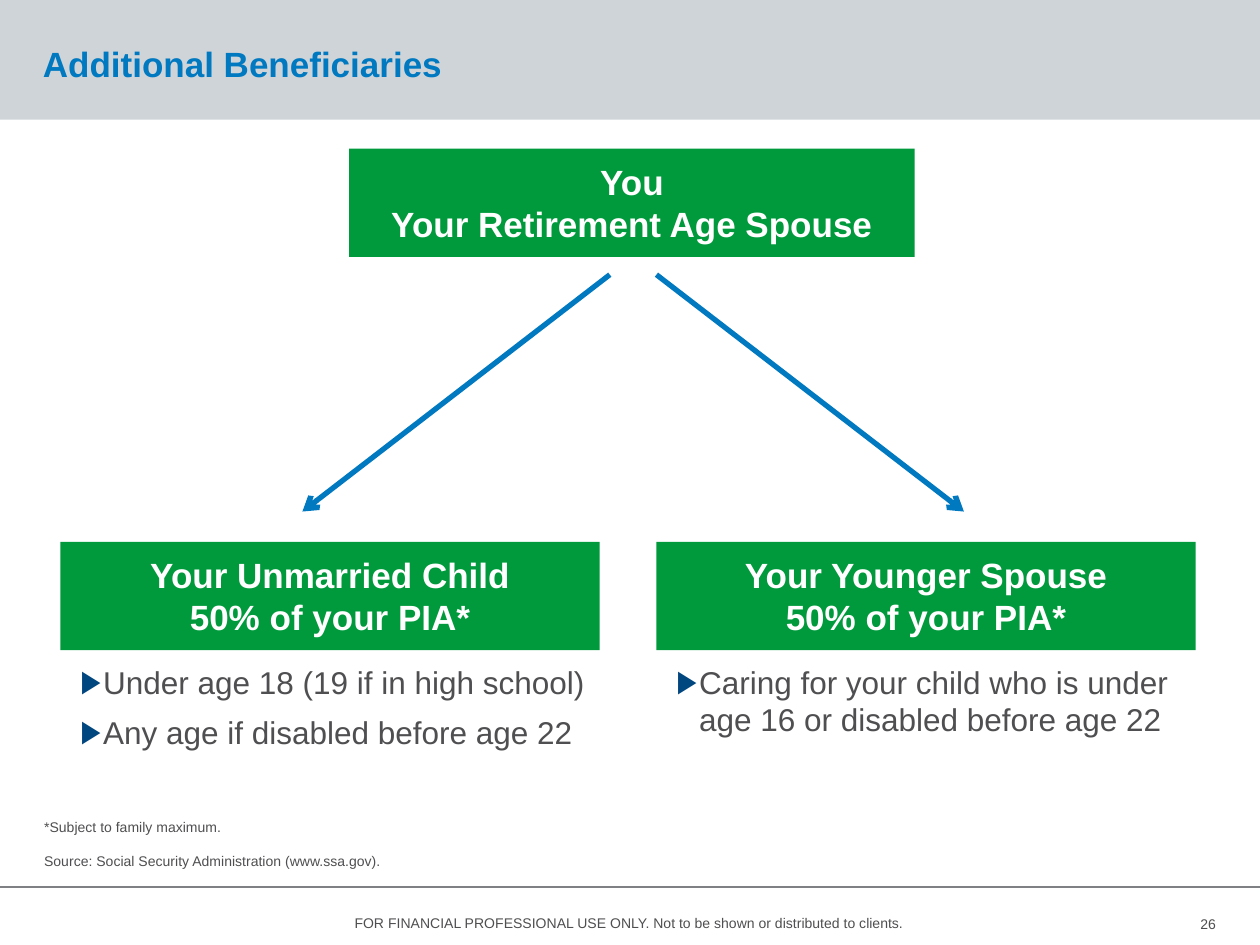
from typing import NamedTuple

from lxml.etree import SubElement as Sub
from pptx import Presentation
from pptx.dml.color import RGBColor
from pptx.enum.shapes import MSO_CONNECTOR as Link, MSO_SHAPE as Kind
from pptx.enum.text import MSO_ANCHOR as Anchor, PP_ALIGN as Align
from pptx.oxml.ns import qn
from pptx.util import Inches, Pt

COLS, ROWS = 100, 75
BLUE, NAVY, GREEN = "0079C1", "00467F", "009A3D"
GREY, BAND, RULE, WHITE = "4F4E50", "CFD4D8", "7E8083", "FFFFFF"

deck = Presentation()
deck.slide_width, deck.slide_height = Inches(10), Inches(7.5)
slide = deck.slides.add_slide(deck.slide_layouts[6])
shapes = slide.shapes


class Area(NamedTuple):
    """Left, top, width and height in grid columns and rows."""
    col: float
    row: float
    wide: float
    high: float


class Style(NamedTuple):
    size: float
    color: str = GREY
    bold: bool = False
    align: Align = Align.LEFT
    anchor: Anchor = Anchor.TOP
    inset: tuple[float, float] = (0, 0)
    wrap: bool = True
    gap: float = 0
    bullet: bool = False


class Branch(NamedTuple):
    col: float
    title: list[str]
    notes: list[str]
    start: float
    end: float


HEAD = Style(20, BLUE, True, anchor=Anchor.MIDDLE)
LABEL = Style(20, WHITE, True, Align.CENTER, Anchor.MIDDLE, (0.1, 0), wrap=False)
NOTE = Style(18, inset=(0.1, 0.05), gap=7, bullet=True)
FINE = Style(8, anchor=Anchor.BOTTOM, gap=10)
FOOT = Style(8, align=Align.CENTER, inset=(0.1, 0.05))
PAGE = Style(8, align=Align.RIGHT, anchor=Anchor.MIDDLE)

BRANCHES = [
    Branch(4.8, ["Your Unmarried Child", "50% of your PIA*"],
           ["Under age 18 (19 if in high school)",
            "Any age if disabled before age 22"], 48.4, 24),
    Branch(52.1, ["Your Younger Spouse", "50% of your PIA*"],
           ["Caring for your child who is under age 16 or disabled before age 22"],
           52.1, 76.5),
]


def rgb(code: str) -> RGBColor:
    return RGBColor.from_string(code)


def across(col: float) -> int:
    return round(deck.slide_width * col / COLS)


def down(row: float) -> int:
    return round(deck.slide_height * row / ROWS)


def place(area: Area) -> tuple[int, int, int, int]:
    return across(area.col), down(area.row), across(area.wide), down(area.high)


def mark(para) -> None:
    """Give a paragraph a hanging triangle bullet."""
    props = para._p.get_or_add_pPr()
    props.set("marL", str(Inches(0.38)))
    props.set("indent", str(Inches(-0.18)))
    Sub(Sub(props, qn("a:buClr")), qn("a:srgbClr"), val=NAVY)
    Sub(props, qn("a:buFont"), typeface="Arial")
    Sub(props, qn("a:buChar"), char="▶")


def write(shape, lines: list[str], style: Style) -> None:
    frame = shape.text_frame
    frame.word_wrap = style.wrap
    frame.vertical_anchor = style.anchor
    side, edge = map(Inches, style.inset)
    frame.margin_left = frame.margin_right = side
    frame.margin_top = frame.margin_bottom = edge
    for i, line in enumerate(lines):
        para = frame.add_paragraph() if i else frame.paragraphs[0]
        para.text = line
        para.alignment = style.align
        para.space_before = Pt(style.gap if i else 0)
        if style.bullet:
            mark(para)
        font = para.font
        font.name, font.size, font.bold = "Arial", Pt(style.size), style.bold
        font.color.rgb = rgb(style.color)


def add_text(area: Area, lines: list[str], style: Style) -> None:
    write(shapes.add_textbox(*place(area)), lines, style)


def add_block(area: Area, fill: str, lines: list[str] | None = None) -> None:
    block = shapes.add_shape(Kind.RECTANGLE, *place(area))
    block.shadow.inherit = False
    block.fill.solid()
    block.fill.fore_color.rgb = rgb(fill)
    block.line.fill.background()
    if lines:
        write(block, lines, LABEL)


def add_line(start: tuple[float, float], end: tuple[float, float],
             color: str, width: float, arrow: bool = False) -> None:
    line = shapes.add_connector(Link.STRAIGHT, across(start[0]), down(start[1]),
                                across(end[0]), down(end[1]))
    line.line.color.rgb = rgb(color)
    line.line.width = Pt(width)
    if arrow:
        Sub(line.line._get_or_add_ln(), qn("a:tailEnd"), type="arrow")
    Sub(line._element.spPr, qn("a:effectLst"))


add_block(Area(0, 0, COLS, 9.5), BAND)
add_line((0, 70.4), (COLS, 70.4), RULE, 0.75)
add_text(Area(3.4, 1.8, 92.9, 6.5), ["Additional Beneficiaries"], HEAD)
add_block(Area(27.7, 11.8, 44.9, 8.6), GREEN, ["You", "Your Retirement Age Spouse"])

for part in BRANCHES:
    add_line((part.start, 21.8), (part.end, 40.6), BLUE, 3, arrow=True)
    add_block(Area(part.col, 43, 42.8, 8.6), GREEN, part.title)
    add_text(Area(part.col - 1.4, 52.1, 45, 12.6), part.notes, NOTE)

add_text(Area(3.5, 65, 90.1, 4),
         ["*Subject to family maximum.",
          "Source: Social Security Administration (www.ssa.gov)."], FINE)
add_text(Area(16.4, 72.1, 67.1, 2.4),
         ["FOR FINANCIAL PROFESSIONAL USE ONLY. "
          "Not to be shown or distributed to clients."], FOOT)
add_text(Area(92.5, 72.1, 4, 2.4), ["26"], PAGE)

deck.save("out.pptx")
